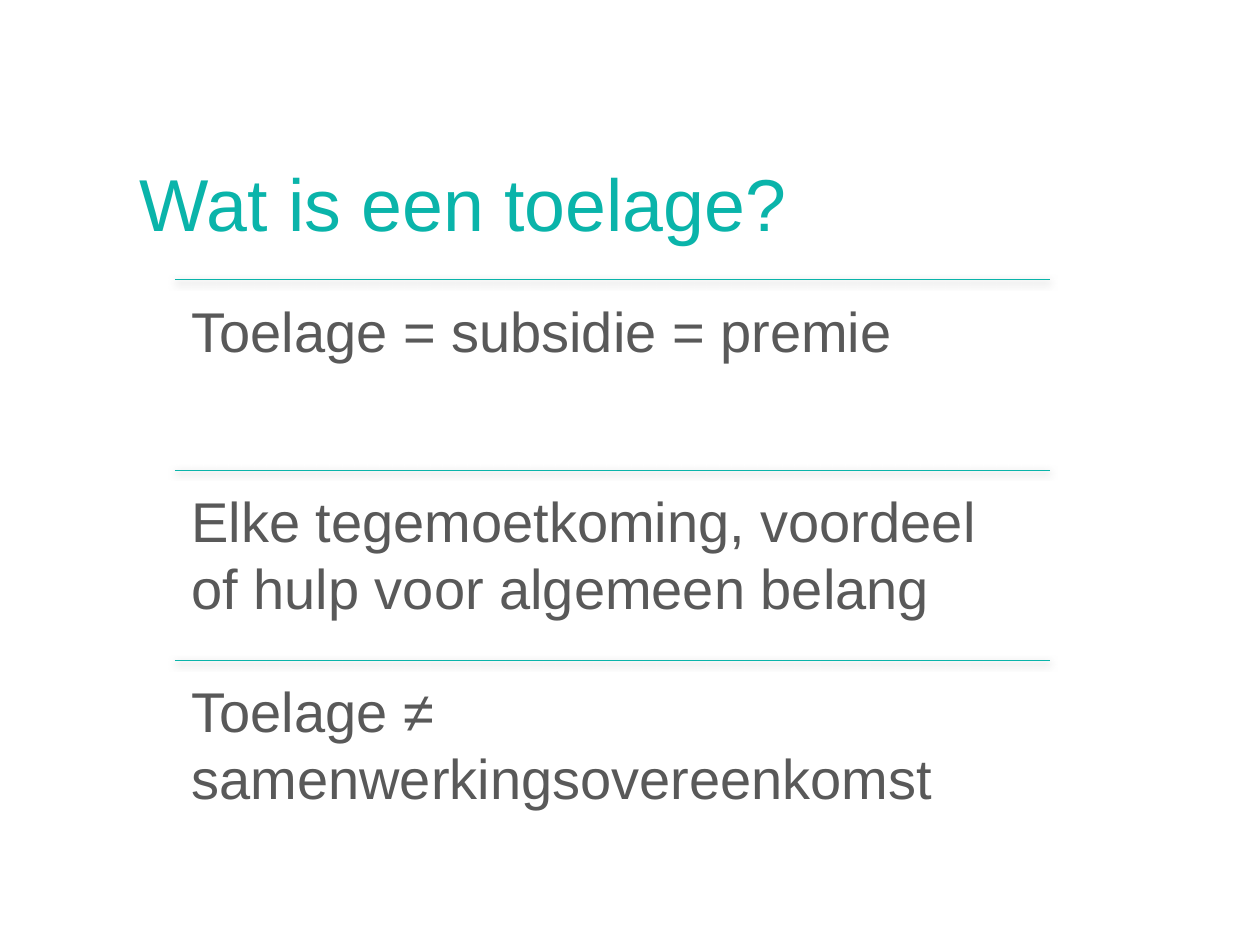
from dataclasses import dataclass

from lxml import etree
from pptx import Presentation
from pptx.dml.color import RGBColor
from pptx.enum.shapes import MSO_CONNECTOR
from pptx.enum.text import MSO_ANCHOR, MSO_AUTO_SIZE, PP_ALIGN
from pptx.oxml import parse_xml
from pptx.oxml.ns import nsdecls
from pptx.shapes.connector import Connector
from pptx.slide import Slide
from pptx.text.text import TextFrame
from pptx.util import Inches, Pt

STRAIGHT = MSO_CONNECTOR.STRAIGHT
TOP, BOTTOM = MSO_ANCHOR.TOP, MSO_ANCHOR.BOTTOM
NO_AUTO_SIZE = MSO_AUTO_SIZE.NONE
LEFT = PP_ALIGN.LEFT

TEAL = RGBColor(0x0A, 0xB4, 0xAA)
GREY = RGBColor(0x59, 0x59, 0x59)
FONT = "Arial"

SLIDE_WIDTH, SLIDE_HEIGHT = Inches(10), Inches(7.5)
COLUMN = SLIDE_WIDTH / 36
CONTENT_WIDTH = round(25 * COLUMN)
LIST_LEFT = round(5 * COLUMN)
LIST_TOP = Inches(2.22)
ROW_HEIGHT = Inches(1.51)


@dataclass(frozen=True)
class Statement:
    """A statement and its row in the list."""

    row: int
    text: str

    @property
    def top(self) -> int:
        """Return the top edge of the row."""
        return LIST_TOP + self.row * ROW_HEIGHT


STATEMENTS = [
    Statement(row, text)
    for row, text in enumerate((
        "Toelage = subsidie = premie",
        "Elke tegemoetkoming, voordeel of hulp voor algemeen belang",
        "Toelage ≠ samenwerkingsovereenkomst",
    ))
]


def write_text(frame: TextFrame, text: str, *, size: float, color: RGBColor,
               anchor: MSO_ANCHOR, inset: float, line_spacing: float,
               space_after: float) -> None:
    """Write one formatted paragraph into a text frame."""
    frame.word_wrap = True
    frame.auto_size = NO_AUTO_SIZE
    frame.vertical_anchor = anchor
    frame.margin_left = frame.margin_right = Inches(inset)
    frame.margin_top = frame.margin_bottom = Inches(inset)
    frame.text = text
    paragraph = frame.paragraphs[0]
    paragraph.alignment = LEFT
    paragraph.line_spacing = line_spacing
    paragraph.space_before = Pt(0)
    paragraph.space_after = Pt(space_after)
    paragraph.font.name = FONT
    paragraph.font.size = Pt(size)
    paragraph.font.color.rgb = color


def add_soft_shadow(line: Connector) -> None:
    """Give a line a soft shadow falling straight down."""
    effects = parse_xml(f"<a:effectLst {nsdecls('a')}/>")
    namespace = effects.nsmap["a"]
    shadow = etree.SubElement(
        effects, f"{{{namespace}}}outerShdw", blurRad=str(Pt(4.5)),
        dist=str(Pt(1.5)), dir="5400000", rotWithShape="0")
    color = etree.SubElement(shadow, f"{{{namespace}}}srgbClr", val="000000")
    etree.SubElement(color, f"{{{namespace}}}alpha", val="63000")
    line._element.spPr.append(effects)


def add_statement(slide: Slide, statement: Statement) -> None:
    """Draw a statement below its dividing line."""
    line = slide.shapes.add_connector(
        STRAIGHT, LIST_LEFT, statement.top,
        LIST_LEFT + CONTENT_WIDTH, statement.top)
    line.line.color.rgb = TEAL
    line.line.width = Pt(0.5)
    add_soft_shadow(line)
    box = slide.shapes.add_textbox(
        LIST_LEFT, statement.top, CONTENT_WIDTH, ROW_HEIGHT)
    write_text(box.text_frame, statement.text, size=32, color=GREY,
               anchor=TOP, inset=0.13, line_spacing=1, space_after=11.2)


def main() -> None:
    """Build and save the presentation."""
    presentation = Presentation()
    presentation.slide_width = SLIDE_WIDTH
    presentation.slide_height = SLIDE_HEIGHT
    slide = presentation.slides.add_slide(presentation.slide_layouts[5])
    title = slide.shapes.title
    title.left, title.top = round(4 * COLUMN), Inches(0.74)
    title.width, title.height = CONTENT_WIDTH, Inches(1.22)
    write_text(title.text_frame, "Wat is een toelage?", size=42, color=TEAL,
               anchor=BOTTOM, inset=0, line_spacing=0.9, space_after=6)
    for statement in STATEMENTS:
        add_statement(slide, statement)
    presentation.save("out.pptx")


if __name__ == "__main__":
    main()
